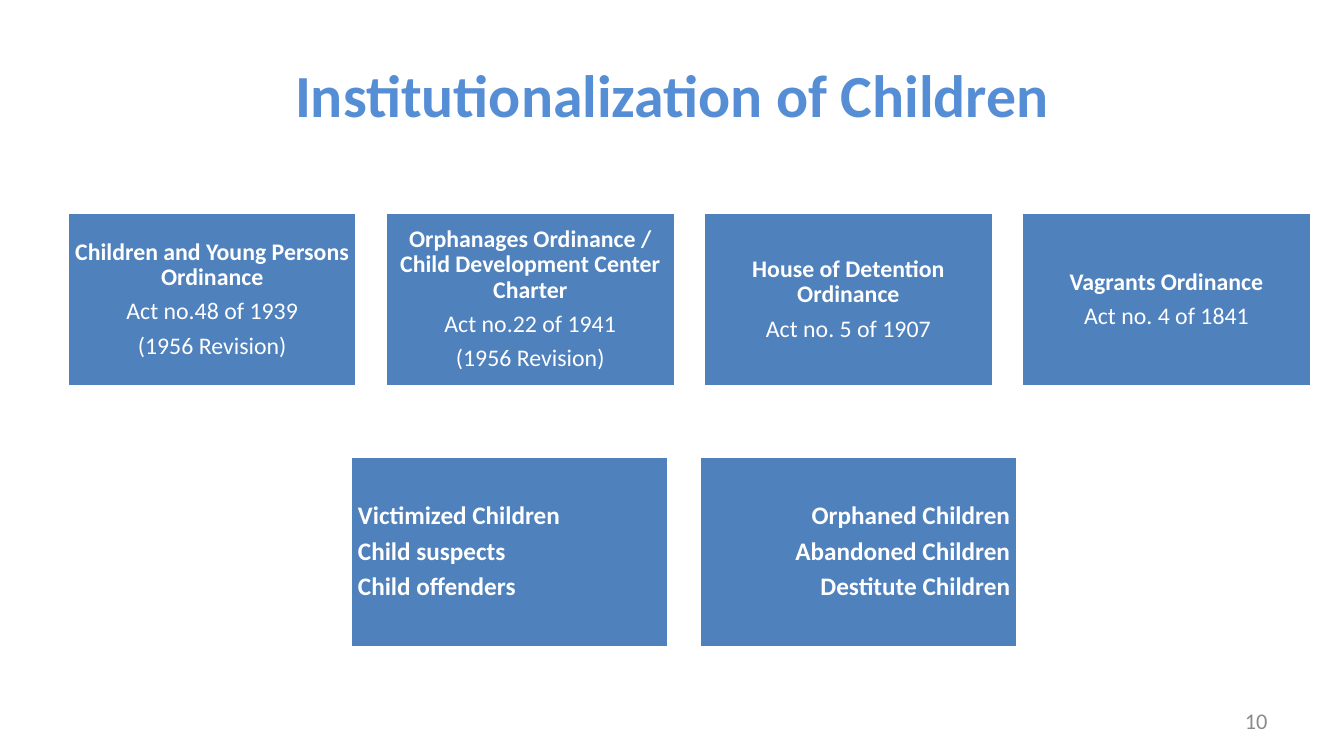
"""Build the slide on the institutionalization of children."""
from dataclasses import dataclass

import pptx
import pptx.dml.color
import pptx.enum.shapes
import pptx.enum.text
import pptx.util

Inches = pptx.util.Inches
Pt = pptx.util.Pt
Align = pptx.enum.text.PP_ALIGN
Anchor = pptx.enum.text.MSO_ANCHOR
HUES = {"title": "558ED5", "box": "4F81BD", "white": "FFFFFF", "page": "8C8C8C"}


@dataclass(frozen=True)
class Row:
    """Geometry and type size shared by a row of boxes."""
    left: float
    top: float
    width: float
    height: float
    step: float
    size: int


@dataclass(frozen=True)
class Box:
    """Lines of one box: the first few are bold."""
    lines: tuple[str, ...]
    bold: int = 1
    align: Align = Align.CENTER


ACTS = Row(0.67, 2.11, 2.87, 1.72, 3.155, 17)
GROUPS = Row(3.48, 4.53, 3.15, 1.89, 3.46, 18)
ROWS = {
    ACTS: (
        Box(("Children and Young Persons Ordinance", "Act no.48 of 1939", "(1956 Revision)")),
        Box(("Orphanages Ordinance / Child Development Center Charter",
             "Act no.22 of 1941", "(1956 Revision)")),
        Box(("House of Detention Ordinance", "Act no. 5 of 1907")),
        Box(("Vagrants Ordinance", "Act no. 4 of 1841")),
    ),
    GROUPS: (
        Box(("Victimized Children", "Child suspects", "Child offenders"), 3, Align.LEFT),
        Box(("Orphaned Children", "Abandoned Children", "Destitute Children"), 3, Align.RIGHT),
    ),
}


def color(name: str) -> pptx.dml.color.RGBColor:
    """Look up a named colour."""
    return pptx.dml.color.RGBColor.from_string(HUES[name])


def style(para, size: float, hue: str, bold: bool, align: Align) -> None:
    """Set the font and alignment of a paragraph."""
    para.alignment = align
    font = para.font
    font.name, font.size, font.bold = "Calibri", Pt(size), bold
    font.color.rgb = color(hue)


def draw_box(slide, row: Row, col: int, box: Box) -> None:
    """Draw one filled box with its lines of text."""
    shape = slide.shapes.add_shape(
        pptx.enum.shapes.MSO_SHAPE.RECTANGLE, Inches(row.left + col * row.step),
        Inches(row.top), Inches(row.width), Inches(row.height))
    shape.shadow.inherit = False
    shape.fill.solid()
    shape.fill.fore_color.rgb = color("box")
    shape.line.color.rgb = color("white")
    shape.line.width = Pt(2)
    frame = shape.text_frame
    frame.word_wrap = True
    frame.vertical_anchor = Anchor.MIDDLE
    frame.margin_left = frame.margin_right = Inches(0.07)
    frame.margin_top = frame.margin_bottom = Inches(0.07)
    frame.text = "\n".join(box.lines)
    for index, para in enumerate(frame.paragraphs):
        style(para, row.size, "white", index < box.bold, box.align)
        para.line_spacing = 0.9
        para.space_after = Pt(6)


def draw_title(slide) -> None:
    """Place and format the title."""
    title = slide.shapes.title
    title.left, title.top = Inches(0.67), Inches(0.3)
    title.width, title.height = Inches(12), Inches(1.25)
    frame = title.text_frame
    frame.text = "Institutionalization of Children"
    frame.auto_size = pptx.enum.text.MSO_AUTO_SIZE.NONE
    frame.vertical_anchor = Anchor.MIDDLE
    style(frame.paragraphs[0], 42.7, "title", True, Align.CENTER)


def draw_page(slide) -> None:
    """Place the page number."""
    page = slide.shapes.add_textbox(Inches(9.56), Inches(6.95), Inches(3.11), Inches(0.4))
    frame = page.text_frame
    frame.word_wrap = True
    frame.vertical_anchor = Anchor.MIDDLE
    frame.text = "10"
    style(frame.paragraphs[0], 16, "page", False, Align.RIGHT)


def main() -> None:
    """Build and save the deck."""
    deck = pptx.Presentation()
    deck.slide_width, deck.slide_height = Inches(13.33), Inches(7.5)
    slide = deck.slides.add_slide(deck.slide_layouts.get_by_name("Title Only"))
    draw_title(slide)
    draw_page(slide)
    for row, boxes in ROWS.items():
        for col, box in enumerate(boxes):
            draw_box(slide, row, col, box)
    deck.save("out.pptx")


if __name__ == "__main__":
    main()
